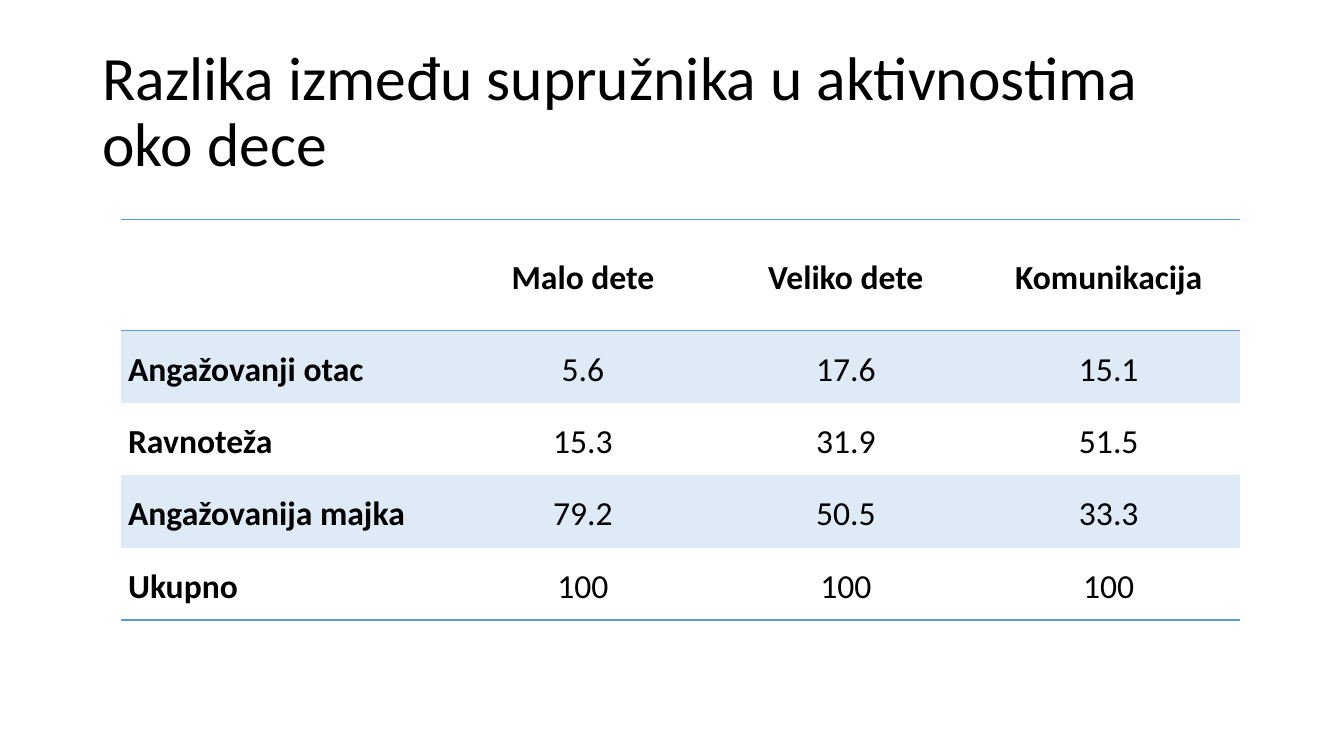
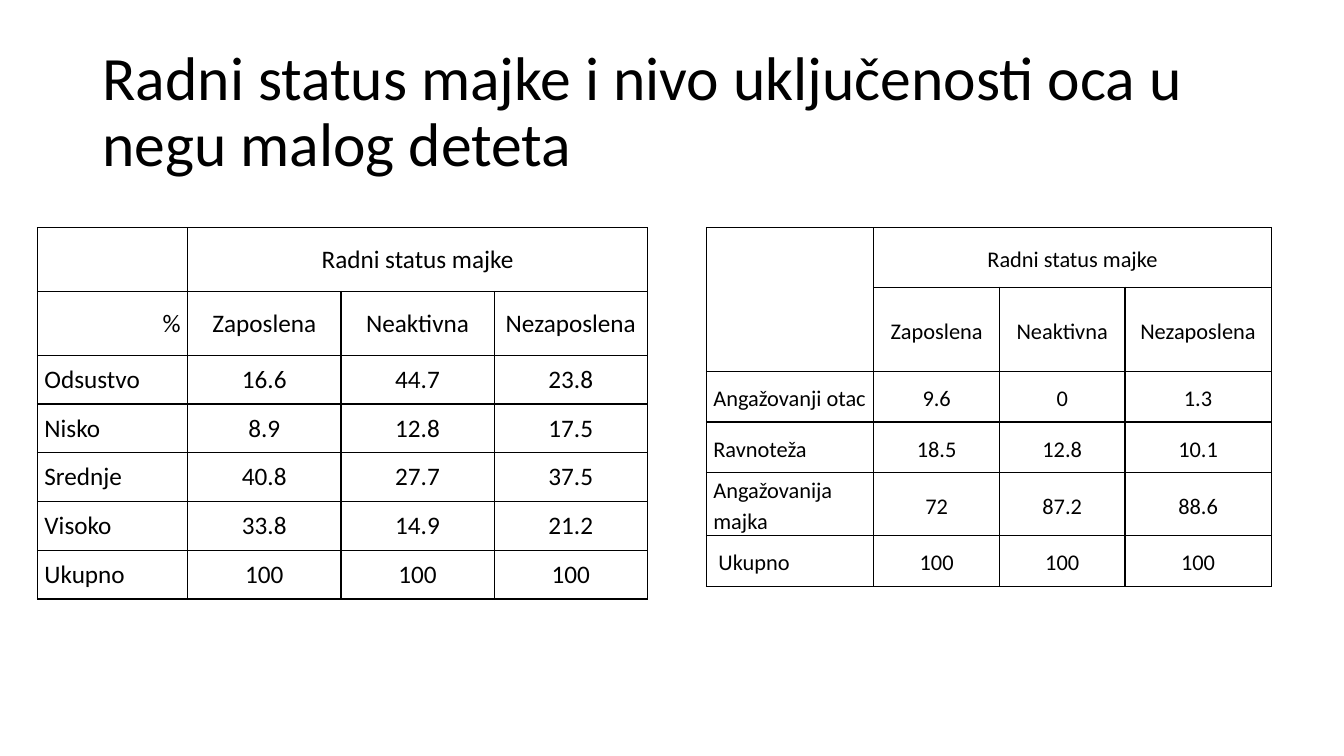
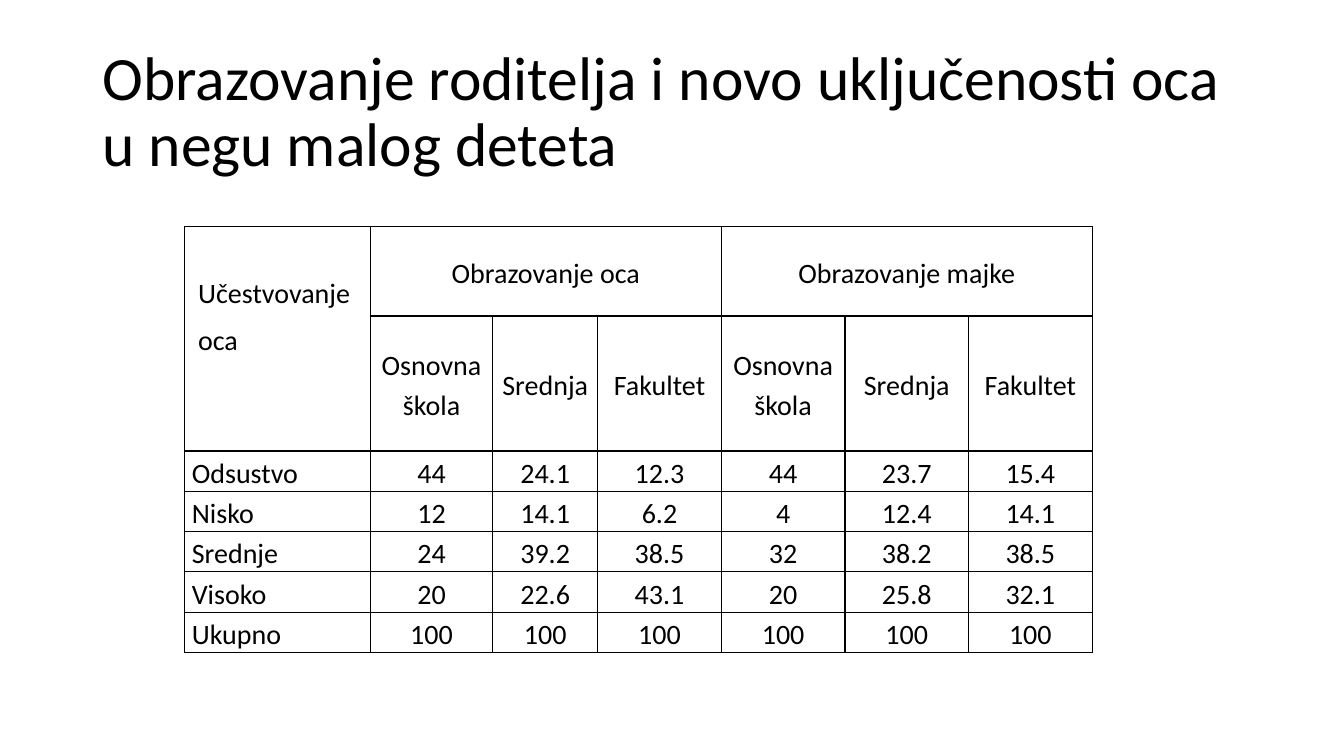
from lxml import etree
from pptx import Presentation
from pptx.dml.color import RGBColor
from pptx.enum import text
from pptx.oxml import ns
from pptx.util import Pt

BLACK = RGBColor(0x00, 0x00, 0x00)
BLUE = RGBColor(0x5B, 0x9B, 0xD5)
PALE_BLUE = RGBColor(0xDE, 0xEB, 0xF7)
FONT = "Calibri"
SIDES = ("L", "R", "T", "B")
LEFT, CENTER, RIGHT = (text.PP_ALIGN.LEFT, text.PP_ALIGN.CENTER, text.PP_ALIGN.RIGHT)
AIRY = {"line_spacing": 1.15, "space_before": Pt(6)}
TOTAL = "Ukupno"
LEVELS = ("Odsustvo", "Nisko", "Srednje", "Visoko", TOTAL)
BALANCE = ("Angažovanji otac", "Ravnoteža", "Angažovanija majka", TOTAL)
EMPLOYMENT = ("Zaposlena", "Neaktivna", "Nezaposlena")
SCHOOLING = ("Osnovna škola", "Srednja", "Fakultet")


def set_all(target, values):
    """Set each attribute of the target from a dict."""
    for name, value in values.items():
        setattr(target, name, value)


def format_font(font, size, bold=False):
    """Apply the shared typeface in black."""
    set_all(font, {"name": FONT, "size": Pt(size), "bold": bold})
    font.color.rgb = BLACK


def titled_slide(deck, title):
    """Add a title-only slide with the shared title style."""
    slide = deck.slides.add_slide(deck.slide_layouts[5])
    heading = slide.shapes.title
    set_all(heading, {"left": Pt(66), "top": Pt(28.75), "width": Pt(828), "height": Pt(104.4)})
    heading.text_frame.text = title
    set_all(heading.text_frame, {"vertical_anchor": text.MSO_ANCHOR.MIDDLE, "word_wrap": True})
    paragraph = heading.text_frame.paragraphs[0]
    set_all(paragraph, {"alignment": LEFT, "line_spacing": 0.9})
    format_font(paragraph.runs[0].font, 44)
    return slide


def draw_borders(cell, colors):
    """Draw the sides that have a colour and clear the others."""
    properties = cell._tc.get_or_add_tcPr()
    for index, side in enumerate(SIDES):
        line = etree.Element(ns.qn(f"a:ln{side}"), w=str(Pt(1)))
        if side in colors:
            fill = etree.SubElement(line, ns.qn("a:solidFill"))
            etree.SubElement(fill, ns.qn("a:srgbClr"), val=str(colors[side]))
        else:
            etree.SubElement(line, ns.qn("a:noFill"))
        properties.insert(index, line)


def banded_look(cell, row, last_row):
    """Shade odd rows and rule the head and foot in blue."""
    if row % 2:
        cell.fill.solid()
        cell.fill.fore_color.rgb = PALE_BLUE
    else:
        cell.fill.background()
    ruled = {"T": row in (0, 1), "B": row in (0, last_row)}
    draw_borders(cell, {side: BLUE for side, shown in ruled.items() if shown})


def grid_look(cell, row, last_row):
    """Leave the cell clear inside a black frame."""
    cell.fill.background()
    draw_borders(cell, dict.fromkeys(SIDES, BLACK))


def data_table(slide, origin, widths, heights, content, size, look=grid_look,
               spacing=AIRY, bold_heads=False, merges=(), margins=None, aligns=None):
    """Place a table at its origin and format every cell by its row and column."""
    left, top = map(Pt, origin)
    frame = slide.shapes.add_table(len(heights), len(widths), left, top,
                                   Pt(sum(widths)), Pt(sum(heights)))
    table = frame.table
    set_all(table, {"first_row": False, "horz_banding": False})
    for column, width in zip(table.columns, widths):
        column.width = Pt(width)
    for line, height in zip(table.rows, heights):
        line.height = Pt(height)
    for row, values in enumerate(content):
        for col, value in enumerate(values):
            cell = table.cell(row, col)
            cell.text = value
            set_all(cell, {"vertical_anchor": text.MSO_ANCHOR.MIDDLE,
                           "margin_left": Pt(5), "margin_right": Pt(5),
                           "margin_top": 0, "margin_bottom": 0})
            set_all(cell, (margins or {}).get((row, col), {}))
            align = (aligns or {}).get((row, col), CENTER if col else LEFT)
            for paragraph in cell.text_frame.paragraphs:
                set_all(paragraph, {"alignment": align, **spacing})
                for run in paragraph.runs:
                    format_font(run.font, size, bold_heads and 0 in (row, col))
            look(cell, row, len(heights) - 1)
    for first, last in merges:
        table.cell(*first).merge(table.cell(*last))


def labelled(labels, figures):
    """Join row labels with their space-separated figures."""
    return [(label, *line.split()) for label, line in zip(labels, figures)]


def spouses_slide(deck):
    """Build the comparison of the spouses."""
    slide = titled_slide(deck, "Razlika između supružnika u aktivnostima oko dece")
    content = [("", "Malo dete", "Veliko dete", "Komunikacija"),
               *labelled(BALANCE, ("5.6 17.6 15.1", "15.3 31.9 51.5",
                                   "79.2 50.5 33.3", "100 100 100"))]
    data_table(slide, (86.5, 157), [236] + [187.8] * 3, [79] + [51.75] * 4,
               content, 24, banded_look, bold_heads=True)


def employment_slide(deck):
    """Build the two tables on the mother's employment."""
    slide = titled_slide(deck, "Radni status majke i nivo uključenosti oca u negu malog deteta")
    header = ("", "Radni status majke", "", "")
    across = ((0, 1), (0, 3))
    levels = [header, ("%", *EMPLOYMENT),
              *labelled(LEVELS, ("16.6 44.7 23.8", "8.9 12.8 17.5", "40.8 27.7 37.5",
                                 "33.8 14.9 21.2", "100 100 100"))]
    data_table(slide, (26.75, 162.75), [107.3] + [109.5] * 3, [45.5] * 2 + [34.85] * 5,
               levels, 18, spacing={}, merges=[across], aligns={(1, 0): RIGHT})
    balance = [header, ("", *EMPLOYMENT),
               *labelled(BALANCE, ("9.6 0 1.3", "18.5 12.8 10.1",
                                   "72 87.2 88.6", "100 100 100"))]
    data_table(slide, (504.6, 162.75), [119.6, 89.7, 89.7, 104.4], [42.5, 60] + [36.3] * 4,
               balance, 16, merges=[across, ((0, 0), (1, 0))],
               margins={(5, 0): {"margin_left": Pt(8.6)}})


def schooling_slide(deck):
    """Build the table on the parents' schooling."""
    slide = titled_slide(deck, "Obrazovanje roditelja i novo uključenosti oca u negu malog deteta")
    content = [("Učestvovanje\noca", "Obrazovanje oca", "", "", "Obrazovanje majke", "", ""),
               ("", *SCHOOLING, *SCHOOLING),
               *labelled(LEVELS, ("44 24.1 12.3 44 23.7 15.4", "12 14.1 6.2 4 12.4 14.1",
                                  "24 39.2 38.5 32 38.2 38.5", "20 22.6 43.1 20 25.8 32.1",
                                  "100 100 100 100 100 100"))]
    data_table(slide, (132, 161.75), [132.5, 87.5, 75] + [88.3] * 4, [64, 96.4] + [28.8] * 5,
               content, 20,
               merges=[((0, 0), (1, 0)), ((0, 1), (0, 3)), ((0, 4), (0, 6))],
               margins={(0, 0): {"margin_left": Pt(9.5), "margin_bottom": Pt(34)}})


def main():
    """Build and save the deck."""
    deck = Presentation()
    set_all(deck, {"slide_width": Pt(960), "slide_height": Pt(540)})
    for build in (spouses_slide, employment_slide, schooling_slide):
        build(deck)
    deck.save("out.pptx")


if __name__ == "__main__":
    main()
